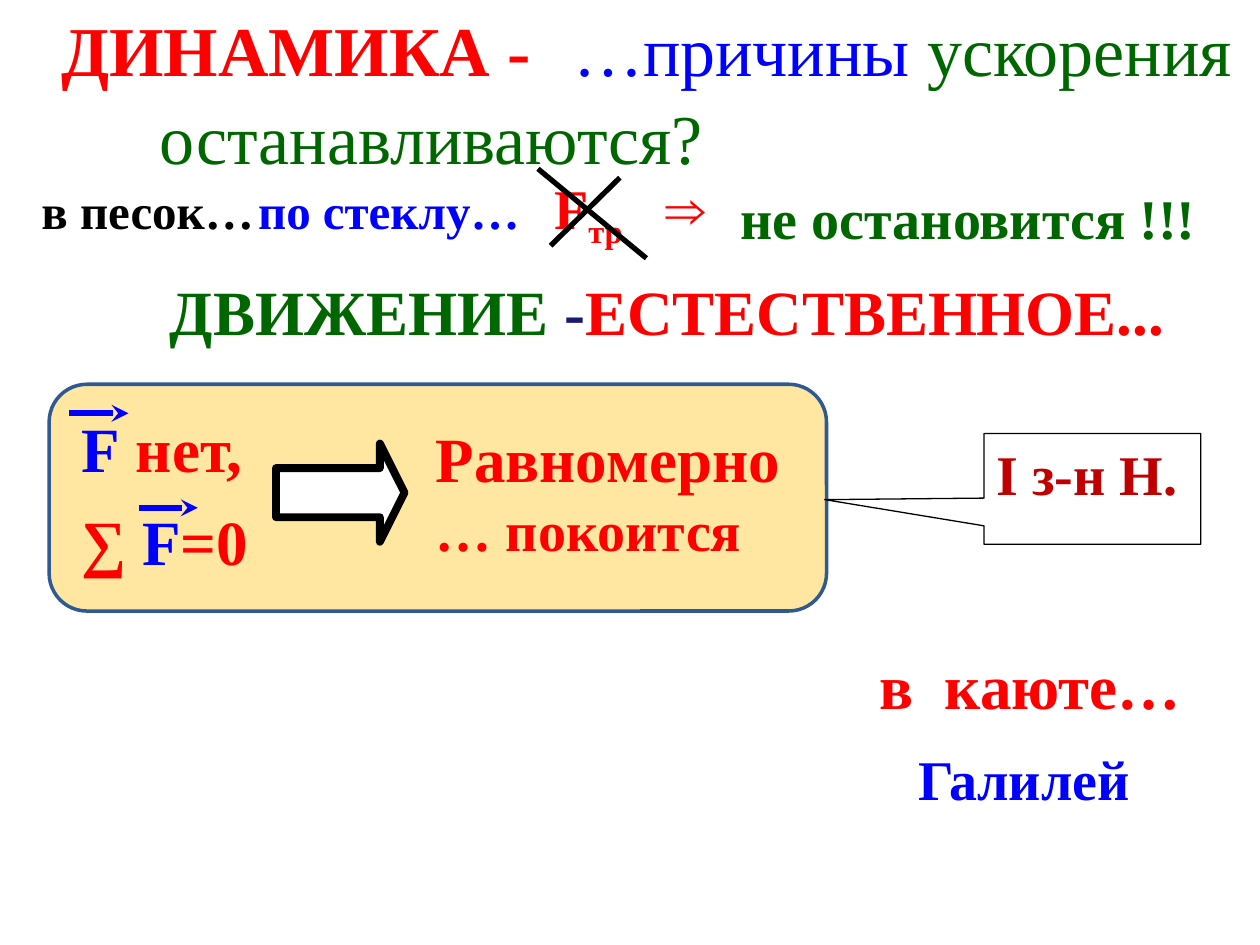
import pptx
import pptx.util
import pptx.dml.color
import pptx.enum.shapes
import pptx.oxml
import pptx.oxml.ns
import lxml.etree

Inches, Pt = pptx.util.Inches, pptx.util.Pt
KINDS = pptx.enum.shapes.MSO_SHAPE
FONT = "Times New Roman"
RED, BLUE, GREEN, BLACK = "FF0000", "0000FF", "006600", "000000"
NAVY, DARK, WHITE, GOLD, EDGE = "1A1A70", "C00000", "FFFFFF", "FFC000", "2E5992"

# Text boxes: place, wrap, bold, runs of (text, size, colour)
TEXTS = [
    ((0.39, 0, 3.97, 0.77), False, True, [("ДИНАМИКА -", 40, RED)]),
    ((4.45, 0, 5.48, 0.77), False, False,
     [("…причины ", 40, BLUE), ("ускорения", 40, GREEN)]),
    ((1.17, 0.7, 4.67, 0.77), False, False, [("останавливаются?", 40, GREEN)]),
    ((0.23, 1.38, 2.11, 0.57), True, True, [("в песок…", 28, BLACK)]),
    ((1.95, 1.38, 2.42, 0.57), True, True, [("по стеклу…", 28, BLUE)]),
    ((4.3, 1.33, 0.9, 0.64), False, True, [("F", 32, RED), ("тр", 32, RED)]),
    ((5.18, 1.33, 0.7, 0.64), False, True, [("⇒", 32, RED)]),
    ((5.78, 1.41, 3.98, 0.64), True, True, [("не остановится !!!", 32, GREEN)]),
    ((1.25, 2.11, 8.28, 0.71), True, True,
     [("ДВИЖЕНИЕ", 36, GREEN), (" -", 36, NAVY), ("ЕСТЕСТВЕННОЕ...", 36, RED)]),
    ((3.36, 3.28, 3.44, 1.17), True, True,
     [("Равномерно", 36, RED), (" … покоится", 32, RED)]),
    ((6.88, 5.08, 2.75, 0.71), False, True, [("в  каюте…", 36, RED)]),
    ((7.19, 5.86, 1.9, 0.64), False, True, [("Галилей", 32, BLUE)]),
]
# Force conditions, with vector arrows over each F
FORCE = [[("F", 36, BLUE), (" нет,", 36, RED)],
         [("∑ ", 36, RED), ("F", 36, BLUE), ("=0", 36, RED)]]
ARROWS = [(0.55, 3.28), (1.1, 4.03)]
CROSS = [(4.27, 1.34, 5.13, 2.05), (4.37, 1.95, 4.92, 1.41)]


def color(code):
    return pptx.dml.color.RGBColor.from_string(code)


def write(par, runs, bold=True):
    for text, size, code in runs:
        run = par.add_run()
        run.text = text
        font = run.font
        font.name, font.size, font.bold = FONT, Pt(size), bold
        font.color.rgb = color(code)
        if text == "тр":
            font._element.set("baseline", "-25000")


def box(home, place, wrap=True):
    frame = home.add_textbox(*map(Inches, place)).text_frame
    frame.word_wrap = wrap
    return frame


def shape(kind, place, fill, edge, width):
    item = deck.add_shape(kind, *map(Inches, place))
    item.shadow.inherit = False
    item.fill.solid()
    item.fill.fore_color.rgb = color(fill)
    item.line.color.rgb = color(edge)
    item.line.width = Pt(width)
    return item


def line(home, ends, code, width, arrow=False):
    item = home.add_connector(pptx.enum.shapes.MSO_CONNECTOR.STRAIGHT,
                              *map(Inches, ends))
    item.line.color.rgb = color(code)
    item.line.width = Pt(width)
    tag = pptx.oxml.ns.qn
    if arrow:
        lxml.etree.SubElement(item.line._get_or_add_ln(), tag("a:tailEnd"),
                              type="stealth")
    lxml.etree.SubElement(item._element.spPr, tag("a:effectLst"))


prs = pptx.Presentation()
prs.slide_width, prs.slide_height = Inches(10), Inches(7.5)
deck = prs.slides.add_slide(prs.slide_layouts[6]).shapes

# Law panel, translucent
panel = shape(KINDS.ROUNDED_RECTANGLE, (0.39, 3.05, 6.17, 1.8), GOLD, EDGE, 2)
tint = panel._element.spPr.find(".//" + pptx.oxml.ns.qn("a:srgbClr"))
lxml.etree.SubElement(tint, pptx.oxml.ns.qn("a:alpha"), val="37000")

# Implication arrow
hence = shape(KINDS.RIGHT_ARROW, (2.19, 3.52, 1.02, 0.78), WHITE, BLACK, 4.5)
hence.adjustments[0], hence.adjustments[1] = 0.5, 0.25

for place, wrap, bold, runs in TEXTS:
    write(box(deck, place, wrap).paragraphs[0], runs, bold)

# Forces with their vector signs
group = deck.add_group_shape().shapes
frame = box(group, (0.55, 3.2, 1.56, 1.41))
for n, runs in enumerate(FORCE):
    par = frame.add_paragraph() if n else frame.paragraphs[0]
    par.space_after = Pt(10)
    write(par, runs)
for x, y in ARROWS:
    line(group, (x, y, x + 0.47, y), BLUE, 3.25, True)

# Callout naming the law
note = shape(KINDS.RECTANGULAR_CALLOUT, (7.81, 3.44, 1.72, 0.88),
             WHITE, BLACK, 0.75)
note.adjustments[0], note.adjustments[1] = -1.235, 0.097
note.text_frame.vertical_anchor = pptx.enum.text.MSO_ANCHOR.TOP
par = note.text_frame.paragraphs[0]
par.alignment = pptx.enum.text.PP_ALIGN.LEFT
write(par, [("I з-н Н.", 32, DARK)])

# Friction crossed out
for ends in CROSS:
    line(deck, ends, BLACK, 3)

prs.save("out.pptx")
